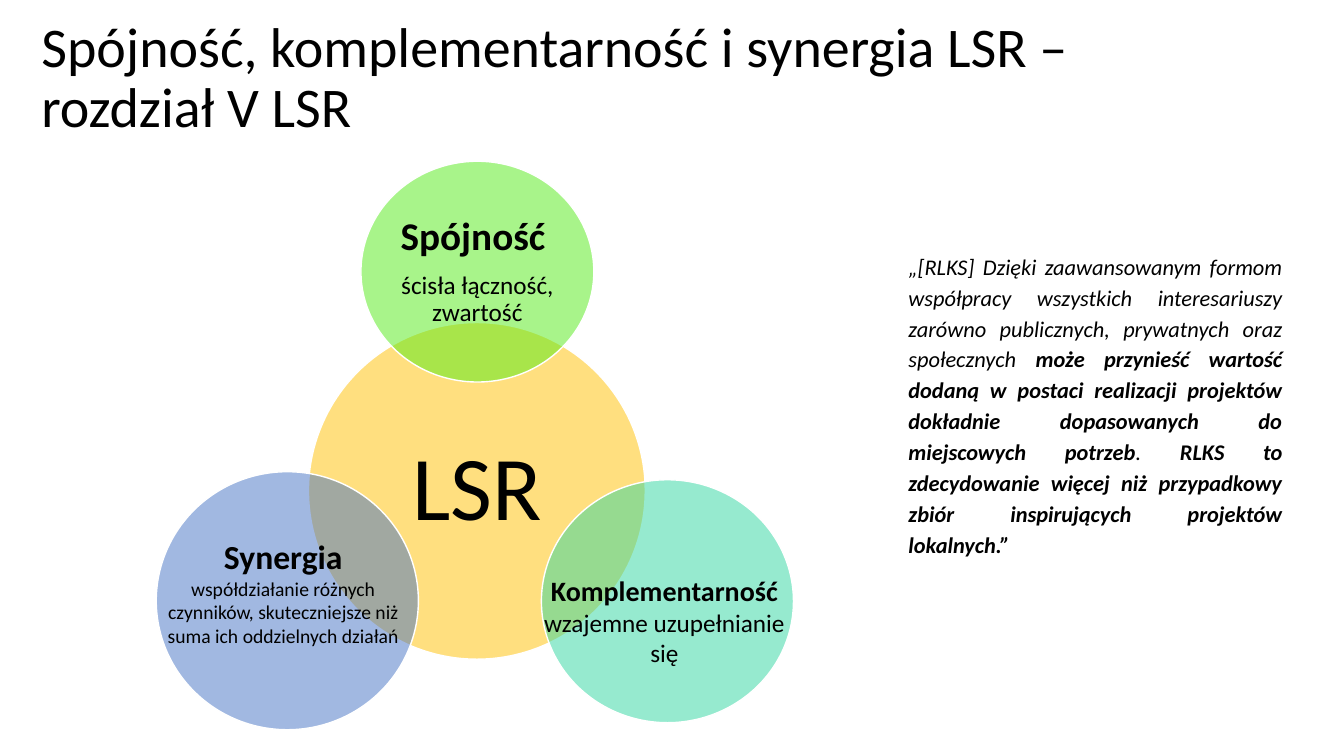
from lxml import etree
from pptx import Presentation
from pptx.dml.color import RGBColor as RGB
from pptx.enum.shapes import MSO_SHAPE as Shape
from pptx.enum.text import MSO_ANCHOR as Anchor, MSO_AUTO_SIZE as Fit, PP_ALIGN as Align
from pptx.oxml.ns import qn
from pptx.util import Inches, Pt

BLACK = RGB(0, 0, 0)
WHITE = RGB(255, 255, 255)
GOLD = RGB(0xFF, 0xC0, 0x00)
GREEN = RGB(0x53, 0xEB, 0x17)
TEAL = RGB(0x2E, 0xD7, 0xA1)
BLUE = RGB(0x44, 0x72, 0xC4)


def style(para, size, align, bold=False):
    para.alignment = align
    font = para.font
    font.name, font.size, font.bold = "Calibri", Pt(size), bold
    font.color.rgb = BLACK


def place(item, box):
    item.left, item.top, item.width, item.height = map(Inches, box)


deck = Presentation()
deck.slide_width, deck.slide_height = Inches(13.33), Inches(7.5)
slide = deck.slides.add_slide(deck.slide_layouts[1])

# Title
title = slide.shapes.title
place(title, (0.31, 0.09, 11.92, 1.39))
frame = title.text_frame
frame.text = "Spójność, komplementarność i synergia LSR – rozdział V LSR"
frame.vertical_anchor = Anchor.MIDDLE
frame.auto_size = Fit.NONE
style(frame.paragraphs[0], 40, Align.LEFT)
frame.paragraphs[0].line_spacing = 0.9

# Quotation
body = slide.placeholders[1]
place(body, (8.91, 2.42, 3.91, 3.38))
body.text_frame.auto_size = Fit.NONE
quote = body.text_frame.paragraphs[0]
style(quote, 16, Align.JUSTIFY)
quote.font.italic = True
quote.line_spacing = 1.15
quote.space_before = quote.space_after = Pt(6)
props = quote._p.get_or_add_pPr()
props.set("marL", "0")
props.set("indent", "0")
etree.SubElement(props, qn("a:buNone"))
props.append(props.find(qn("a:defRPr")))  # keeps the schema order
parts = [
    ("„[RLKS] Dzięki zaawansowanym formom współpracy wszystkich interesariuszy "
     "zarówno publicznych, prywatnych oraz społecznych ", False),
    ("może przynieść wartość dodaną w postaci realizacji projektów "
     "dokładnie dopasowanych do miejscowych potrzeb", True),
    (". ", False),
    ("RLKS to zdecydowanie więcej niż przypadkowy zbiór inspirujących "
     "projektów lokalnych.”", True),
]
for text, bold in parts:
    run = quote.add_run()
    run.text = text
    run.font.bold = bold

# Circles with labels: colour, circle, label box, inset, anchor, line spacing, lines
# Each line: text, size, bold, space after
circles = [
    (GOLD, (3.06, 3.2, 3.34, 3.34), (3.55, 3.69, 2.36, 2.36), 0.09, Anchor.MIDDLE, 0.9,
     [("LSR", 65, False, 23)]),
    (GREEN, (3.58, 1.6, 2.31, 2.19), (3.92, 1.92, 1.63, 1.55), 0.04, Anchor.MIDDLE, 0.9,
     [("Spójność ", 28, True, 10), ("ścisła łączność, zwartość", 18, False, 6)]),
    (TEAL, (5.37, 4.76, 2.5, 2.41), (5.28, 5.64, 2.62, 1.38), 0.1, Anchor.TOP, 1.0,
     [("Komplementarność", 20, True, 0), ("wzajemne uzupełnianie się", 18, False, 0)]),
    (BLUE, (1.55, 4.68, 2.6, 2.56), (1.53, 5.27, 2.56, 1.45), 0.1, Anchor.TOP, 1.0,
     [("Synergia", 24, True, 0),
      ("współdziałanie różnych czynników, skuteczniejsze niż "
       "suma ich oddzielnych działań", 14, False, 0)]),
]
for color, ring, box, inset, anchor, pitch, lines in circles:
    disc = slide.shapes.add_shape(Shape.OVAL, *map(Inches, ring))
    disc.shadow.inherit = False
    disc.fill.solid()
    disc.fill.fore_color.rgb = color
    disc.line.color.rgb = WHITE
    disc.line.width = Pt(1)
    # Half transparent fill
    tint = disc._element.spPr.find(qn("a:solidFill"))[0]
    etree.SubElement(tint, qn("a:alpha"), val="50000")

    label = slide.shapes.add_textbox(*map(Inches, box))
    frame = label.text_frame
    frame.word_wrap = True
    frame.vertical_anchor = anchor
    frame.margin_left = frame.margin_right = Inches(inset)
    frame.margin_top = frame.margin_bottom = Inches(min(inset, 0.05) if anchor == Anchor.TOP else inset)
    for i, (text, size, bold, after) in enumerate(lines):
        para = frame.add_paragraph() if i else frame.paragraphs[0]
        para.text = text
        style(para, size, Align.CENTER, bold)
        para.line_spacing = pitch
        para.space_after = Pt(after)

deck.save("out.pptx")
